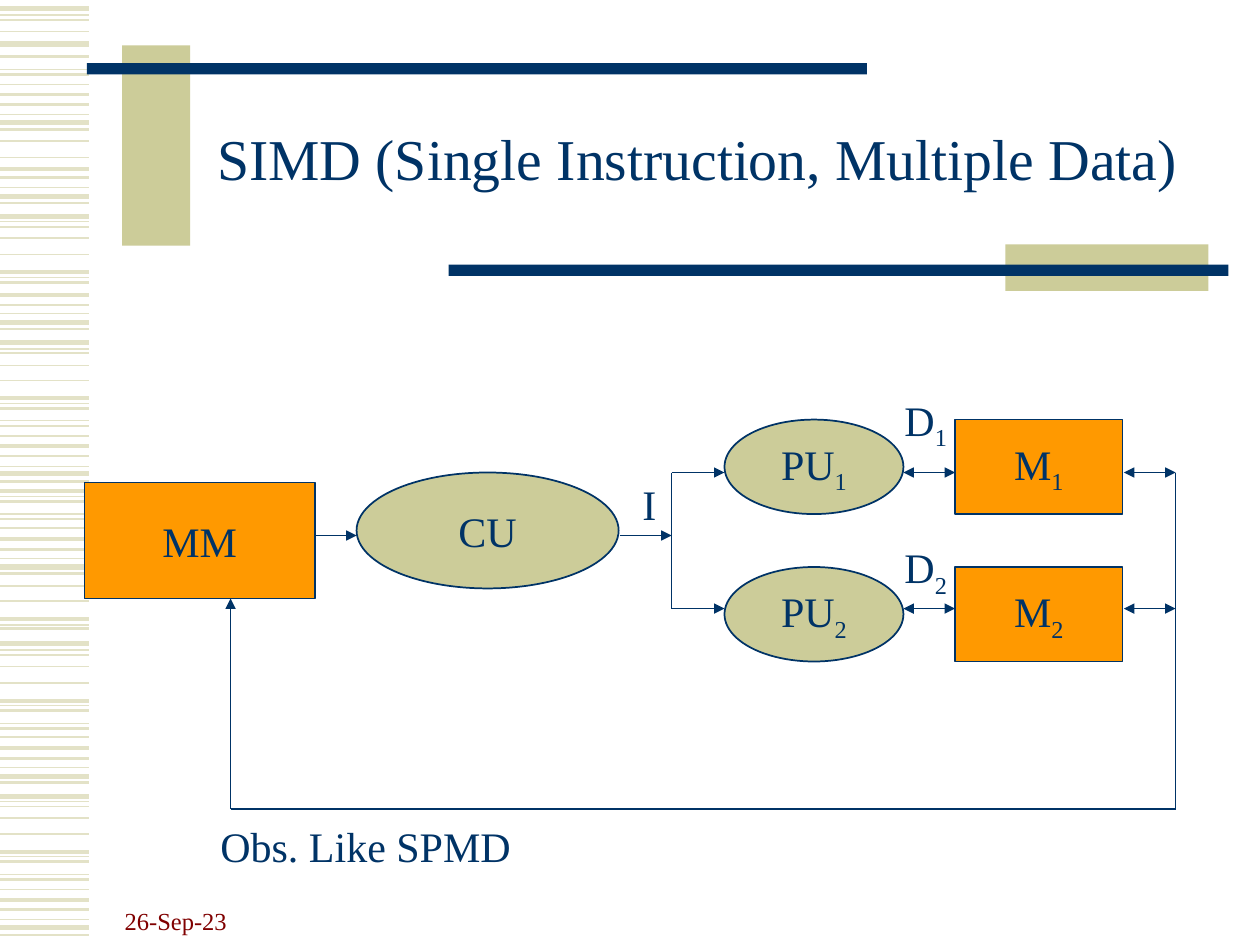
from lxml.etree import SubElement
from pptx import Presentation
from pptx.dml.color import RGBColor
from pptx.enum.shapes import MSO_CONNECTOR, MSO_SHAPE
from pptx.enum.text import MSO_ANCHOR, MSO_AUTO_SIZE, PP_ALIGN
from pptx.oxml.ns import qn
from pptx.util import Cm, Pt

NAVY = RGBColor(0x00, 0x33, 0x66)
KHAKI = RGBColor(0xCC, 0xCC, 0x99)
PALE_KHAKI = RGBColor(0xE3, 0xE2, 0xC7)
ORANGE = RGBColor(0xFF, 0x99, 0x00)
MAROON = RGBColor(0x80, 0x00, 0x00)
FONT = "Times New Roman"
CM_PER_INCH = 2.54

TITLE = "SIMD (Single Instruction, Multiple Data)"
TITLE_BOX = (1.5, 0.67, 8.07, 1.25)

STRIPE_WIDTH = 0.71
STRIPES = {
    0.75: [0.12, 0.55, 0.91, 1.49, 1.76, 2.2, 2.49, 2.77, 3.2, 3.34, 3.7, 3.94, 4.08,
           4.43, 4.96, 5.16, 5.6, 5.74, 6.09, 6.36, 6.8, 6.94, 7.3],
    1: [0.16, 0.25, 0.67, 1.12, 1.25, 1.8, 1.89, 2.02, 2.8, 2.9, 3.02, 3.46, 4.19,
        4.65, 4.77, 5.2, 5.29, 5.42, 5.85, 6.4, 6.49, 6.62, 7.06],
    1.5: [0.45, 0.59, 0.83, 1.03, 1.41, 1.61, 2.24, 2.42, 2.61, 3.24, 3.38, 3.62, 3.82,
          3.98, 4.12, 4.36, 4.55, 4.99, 5.64, 5.78, 6.02, 6.21, 6.84, 6.98, 7.22, 7.42],
    2.25: [0.75, 1.34, 2.16, 2.34, 3.16, 3.54, 3.9, 4.28, 4.91, 5.56, 5.94, 6.76, 7.14],
    3: [0.07, 0.35, 0.97, 1.56, 1.72, 2.56, 2.72, 3.76, 4.5, 5.11, 6.16, 6.32, 7.36],
}
BARS = [
    ((0.97, 0.36, 0.54, 1.59), KHAKI),
    ((0.69, 0.5, 6.19, 0.09), NAVY),
    ((7.98, 1.94, 1.61, 0.37), KHAKI),
    ((3.56, 2.1, 6.19, 0.09), NAVY),
]

MAIN_NODES = [
    (MSO_SHAPE.RECTANGLE, (0.67, 3.83, 1.83, 0.92), ORANGE, "MM"),
    (MSO_SHAPE.OVAL, (2.83, 3.75, 2.08, 0.92), KHAKI, "CU"),
]
ROWS = [("1", 3.33, 3.75, 3.08), ("2", 4.5, 4.83, 4.25)]
ARROWS = [
    ((2.5, 4.25), (2.83, 4.25)),
    ((4.92, 4.25), (5.33, 4.25)),
    ((1.83, 6.42), (1.83, 4.75)),
]
PLAIN_LINES = [
    ((5.33, 3.75), (5.33, 4.83)),
    ((9.33, 3.75), (9.33, 6.42)),
    ((9.33, 6.42), (1.83, 6.42)),
]


def lengths(*inches):
    return [Cm(value * CM_PER_INCH) for value in inches]


def write(shape, text, subscript="", size=24, color=NAVY):
    paragraph = shape.text_frame.paragraphs[0]
    paragraph.text = text
    if subscript:
        run = paragraph.add_run()
        run.text = subscript
        run._r.get_or_add_rPr().set("baseline", "-25000")
    for run in paragraph.runs:
        run.font.name = FONT
        run.font.size = Pt(size)
        run.font.color.rgb = color
    return paragraph


def add_line(slide, start, end, color=NAVY, width=1, arrowheads=()):
    connector = slide.shapes.add_connector(
        MSO_CONNECTOR.STRAIGHT, *lengths(*start, *end))
    connector.line.color.rgb = color
    connector.line.width = Pt(width)
    properties = connector._element.spPr
    for arrowhead in arrowheads:
        SubElement(properties.find(qn("a:ln")), qn(f"a:{arrowhead}"), type="triangle")
    SubElement(properties, qn("a:effectLst"))


def add_filled(slide, kind, box, color):
    shape = slide.shapes.add_shape(kind, *lengths(*box))
    shape.shadow.inherit = False
    shape.fill.solid()
    shape.fill.fore_color.rgb = color
    shape.line.fill.background()
    return shape


def add_node(slide, kind, box, color, text, subscript=""):
    shape = add_filled(slide, kind, box, color)
    shape.line.color.rgb = NAVY
    shape.line.width = Pt(1)
    shape.text_frame.word_wrap = False
    shape.text_frame.vertical_anchor = MSO_ANCHOR.MIDDLE
    write(shape, text, subscript).alignment = PP_ALIGN.CENTER


def add_label(slide, box, text, subscript="", size=24, color=NAVY, anchor=MSO_ANCHOR.TOP):
    label = slide.shapes.add_textbox(*lengths(*box))
    label.text_frame.word_wrap = True
    label.text_frame.vertical_anchor = anchor
    write(label, text, subscript, size, color)


def add_background(slide):
    for width, heights in STRIPES.items():
        for y in heights:
            add_line(slide, (0, y), (STRIPE_WIDTH, y), PALE_KHAKI, width)
    for box, color in BARS:
        add_filled(slide, MSO_SHAPE.RECTANGLE, box, color)


def add_title(slide):
    title = slide.shapes.title
    title.left, title.top, title.width, title.height = lengths(*TITLE_BOX)
    title.text_frame.auto_size = MSO_AUTO_SIZE.NONE
    title.text_frame.vertical_anchor = MSO_ANCHOR.MIDDLE
    paragraph = write(title, TITLE, size=33)
    paragraph.alignment = PP_ALIGN.CENTER
    paragraph.line_spacing = 0.85


def add_diagram(slide):
    for node in MAIN_NODES:
        add_node(slide, *node)
    for number, top, line_y, label_top in ROWS:
        add_node(slide, MSO_SHAPE.OVAL, (5.75, top, 1.42, 0.75), KHAKI, "PU", number)
        add_node(slide, MSO_SHAPE.RECTANGLE, (7.58, top, 1.33, 0.75), ORANGE, "M", number)
        add_label(slide, (7.08, label_top, 0.58, 0.5), "D", number)
        add_line(slide, (5.33, line_y), (5.75, line_y), arrowheads=["tailEnd"])
        for left, right in [(7.17, 7.58), (8.92, 9.33)]:
            add_line(slide, (left, line_y), (right, line_y),
                     arrowheads=["headEnd", "tailEnd"])
    for start, end in ARROWS:
        add_line(slide, start, end, arrowheads=["tailEnd"])
    for start, end in PLAIN_LINES:
        add_line(slide, start, end)
    add_label(slide, (5, 3.75, 0.42, 0.5), "I")
    add_label(slide, (1.65, 6.46, 2.62, 0.51), "Obs. Like SPMD")


def main():
    presentation = Presentation()
    presentation.slide_width, presentation.slide_height = lengths(10, 7.5)
    slide = presentation.slides.add_slide(presentation.slide_layouts[5])
    add_background(slide)
    add_title(slide)
    add_diagram(slide)
    add_label(slide, (0.89, 6.97, 2.08, 0.5), "26-Sep-23", size=14, color=MAROON,
              anchor=MSO_ANCHOR.BOTTOM)
    presentation.save("out.pptx")


if __name__ == "__main__":
    main()
